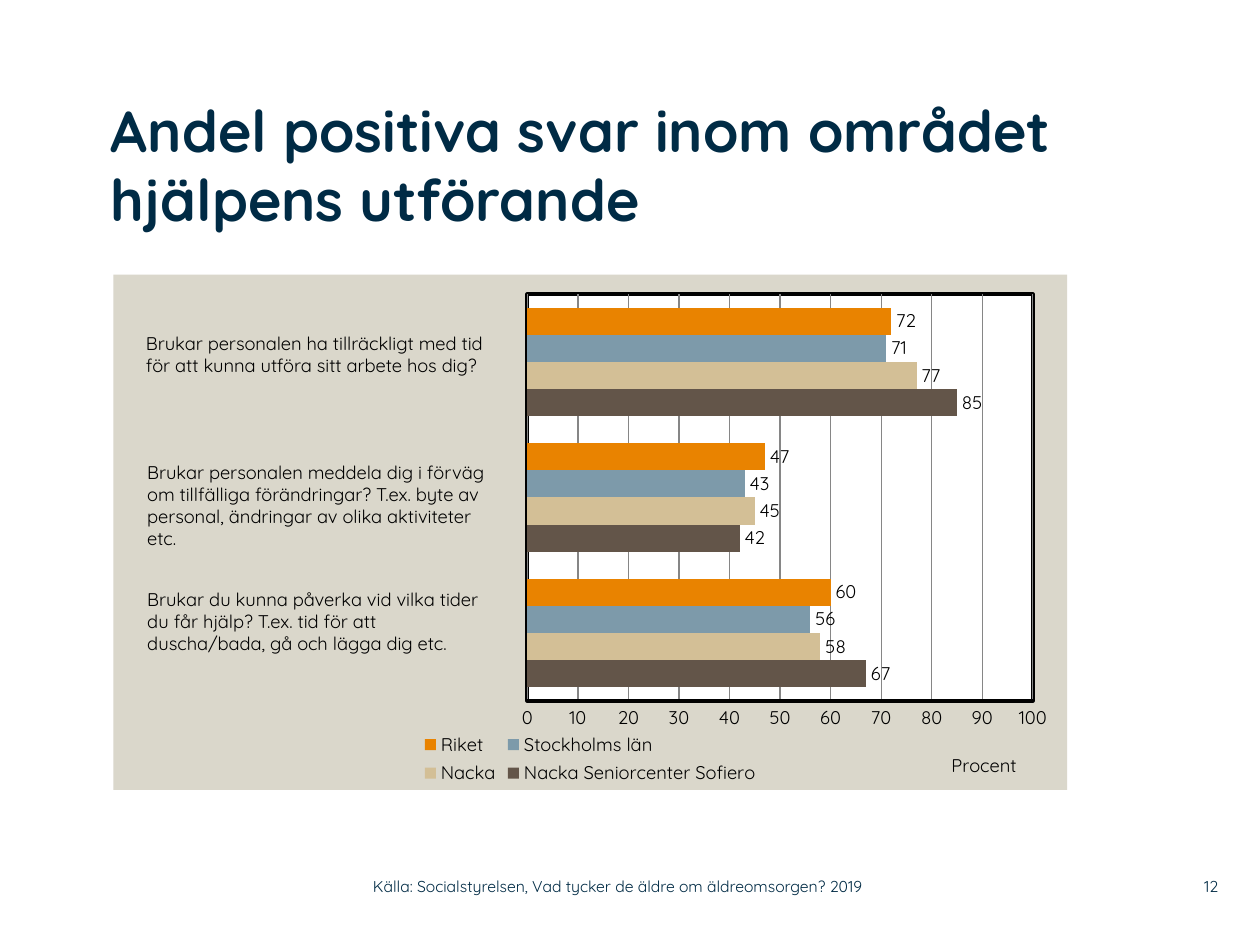
from dataclasses import dataclass

from lxml.etree import SubElement
from pptx import Presentation
from pptx.chart.data import CategoryChartData
from pptx.dml.color import RGBColor
from pptx.enum.chart import XL_CHART_TYPE, XL_LABEL_POSITION, XL_LEGEND_POSITION, XL_TICK_MARK
from pptx.enum.text import MSO_ANCHOR, PP_ALIGN
from pptx.oxml import parse_xml
from pptx.oxml.ns import nsdecls, qn
from pptx.util import Inches, Pt


@dataclass(frozen=True)
class Theme:
    font: str = "Quicksand"
    navy: str = "002B45"
    black: str = "000000"
    white: str = "FFFFFF"
    panel: str = "DAD7CB"
    grid: str = "868686"
    title_size: float = 33
    body_size: float = 10.5
    footer_size: float = 9


THEME = Theme()

SERIES = [
    ("Nacka Seniorcenter Sofiero", (67, 42, 85), "635549"),
    ("Nacka", (58, 45, 77), "D3BF96"),
    ("Stockholms län", (56, 43, 71), "7D9AAA"),
    ("Riket", (60, 47, 72), "E98300"),
]

QUESTIONS = [
    ((1.06, 2.59, 2.99, 0.45),
     ["Brukar personalen ha tillräckligt med tid",
      "för att kunna utföra sitt arbete hos dig?"]),
    ((1.07, 3.61, 2.97, 0.81),
     ["Brukar personalen meddela dig i förväg om tillfälliga förändringar? "
      "T.ex. byte av personal, ändringar av olika aktiviteter etc."]),
    ((1.07, 4.62, 2.97, 0.63),
     ["Brukar du kunna påverka vid vilka tider",
      "du får hjälp? T.ex. tid för att",
      "duscha/bada, gå och lägga dig etc."]),
]


def apply_format(target, values):
    for name, value in values.items():
        setattr(target, name, value)


def style_font(font, size, color, bold=False):
    apply_format(font, {"name": THEME.font, "size": Pt(size), "bold": bold})
    font.color.rgb = RGBColor.from_string(color)


def add_text(page, box, lines, size, color, bold=False, align=PP_ALIGN.LEFT, **frame_format):
    frame = page.shapes.add_textbox(*map(Inches, box)).text_frame
    apply_format(frame, {"word_wrap": True, **frame_format})
    for index, line in enumerate(lines):
        para = frame.paragraphs[0] if index == 0 else frame.add_paragraph()
        para.alignment = align
        span = para.add_run()
        span.text = line
        style_font(span.font, size, color, bold)


def place_part(element, position, left, top, width=None, height=None, inner=False):
    for old in element.findall(qn("c:layout")):
        element.remove(old)
    layout = parse_xml(f"<c:layout {nsdecls('c')}/>")
    manual = SubElement(layout, qn("c:manualLayout"))
    values = {"layoutTarget": "inner" if inner else None, "xMode": "edge", "yMode": "edge",
              "x": left, "y": top, "w": width, "h": height}
    for name, value in values.items():
        if value is not None:
            SubElement(manual, qn(f"c:{name}")).set("val", str(value))
    element.insert(position, layout)


def area_format(fill, line):
    return parse_xml(
        f"<c:spPr {nsdecls('c', 'a')}><a:solidFill><a:srgbClr val=\"{fill}\"/></a:solidFill>"
        f"{line}</c:spPr>")


def style_axes(chart):
    chart.category_axis.visible = False
    axis = chart.value_axis
    apply_format(axis, {"minimum_scale": 0, "maximum_scale": 100, "major_unit": 10,
                        "major_tick_mark": XL_TICK_MARK.NONE,
                        "minor_tick_mark": XL_TICK_MARK.NONE,
                        "has_major_gridlines": True, "has_title": True})
    style_font(axis.tick_labels.font, THEME.body_size, THEME.black)
    for line, color, width in ((axis.format.line, THEME.black, 2),
                               (axis.major_gridlines.format.line, THEME.grid, 0.75)):
        line.color.rgb = RGBColor.from_string(color)
        line.width = Pt(width)
    span = axis.axis_title.text_frame.paragraphs[0].add_run()
    span.text = "Procent"
    style_font(span.font, THEME.body_size, THEME.black)
    place_part(axis.axis_title._element, 1, 0.875, 0.92)


def style_bars(plot):
    apply_format(plot, {"gap_width": 100, "overlap": 0, "vary_by_categories": False})
    for series, (_, _, color) in zip(plot.series, SERIES):
        series.format.fill.solid()
        series.format.fill.fore_color.rgb = RGBColor.from_string(color)
        labels = series.data_labels
        apply_format(labels, {"show_value": True, "position": XL_LABEL_POSITION.OUTSIDE_END})
        style_font(labels.font, THEME.body_size, THEME.black)


def add_answer_chart(page, box):
    data = CategoryChartData()
    data.categories = ["1", "2", "3"]
    for name, values, _ in SERIES:
        data.add_series(name, values)
    chart = page.shapes.add_chart(XL_CHART_TYPE.BAR_CLUSTERED, *map(Inches, box), data).chart
    apply_format(chart, {"has_title": False, "has_legend": True})
    style_font(chart.font, THEME.body_size, THEME.black)
    style_axes(chart)
    style_bars(chart.plots[0])
    apply_format(chart.legend, {"position": XL_LEGEND_POSITION.BOTTOM,
                                "include_in_layout": False})
    style_font(chart.legend.font, THEME.body_size, THEME.black)
    place_part(chart.legend._element, 1, 0.32, 0.88, 0.36, 0.12)

    chart_part = chart._chartSpace.find(qn("c:chart"))
    plot_area = chart_part.find(qn("c:plotArea"))
    place_part(plot_area, 0, 0.434, 0.038, 0.53, 0.789, inner=True)
    border = (f'<a:ln w="{Pt(2.25)}"><a:solidFill><a:srgbClr val="{THEME.black}"/>'
              "</a:solidFill></a:ln>")
    plot_area.append(area_format(THEME.white, border))
    chart_part.addnext(area_format(THEME.panel, "<a:ln><a:noFill/></a:ln>"))


def add_title(page, box):
    add_text(page, box, ["Andel positiva svar inom området hjälpens utförande"],
             THEME.title_size, THEME.navy, bold=True, **NO_MARGINS)


def add_questions(page):
    for box, lines in QUESTIONS:
        add_text(page, box, lines, THEME.body_size, THEME.black)


def add_footer(page, source_box, number_box):
    footer = {"vertical_anchor": MSO_ANCHOR.MIDDLE, **NO_MARGINS}
    add_text(page, source_box,
             ["Källa: Socialstyrelsen, Vad tycker de äldre om äldreomsorgen? 2019"],
             THEME.footer_size, THEME.navy, **footer)
    add_text(page, number_box, ["12"], THEME.footer_size, THEME.navy,
             align=PP_ALIGN.RIGHT, **footer)


NO_MARGINS = {f"margin_{side}": 0 for side in ("left", "top", "right", "bottom")}


def main():
    deck = Presentation()
    apply_format(deck, {"slide_width": Inches(10), "slide_height": Inches(7.5)})
    page = deck.slides.add_slide(deck.slide_layouts[6])
    add_answer_chart(page, (0.9, 2.18, 7.57, 4.09))
    add_title(page, (0.88, 0.75, 7.6, 1.42))
    add_questions(page)
    add_footer(page, (2.96, 6.89, 4.43, 0.29), (9.2, 6.89, 0.47, 0.29))
    deck.save("out.pptx")


if __name__ == "__main__":
    main()
